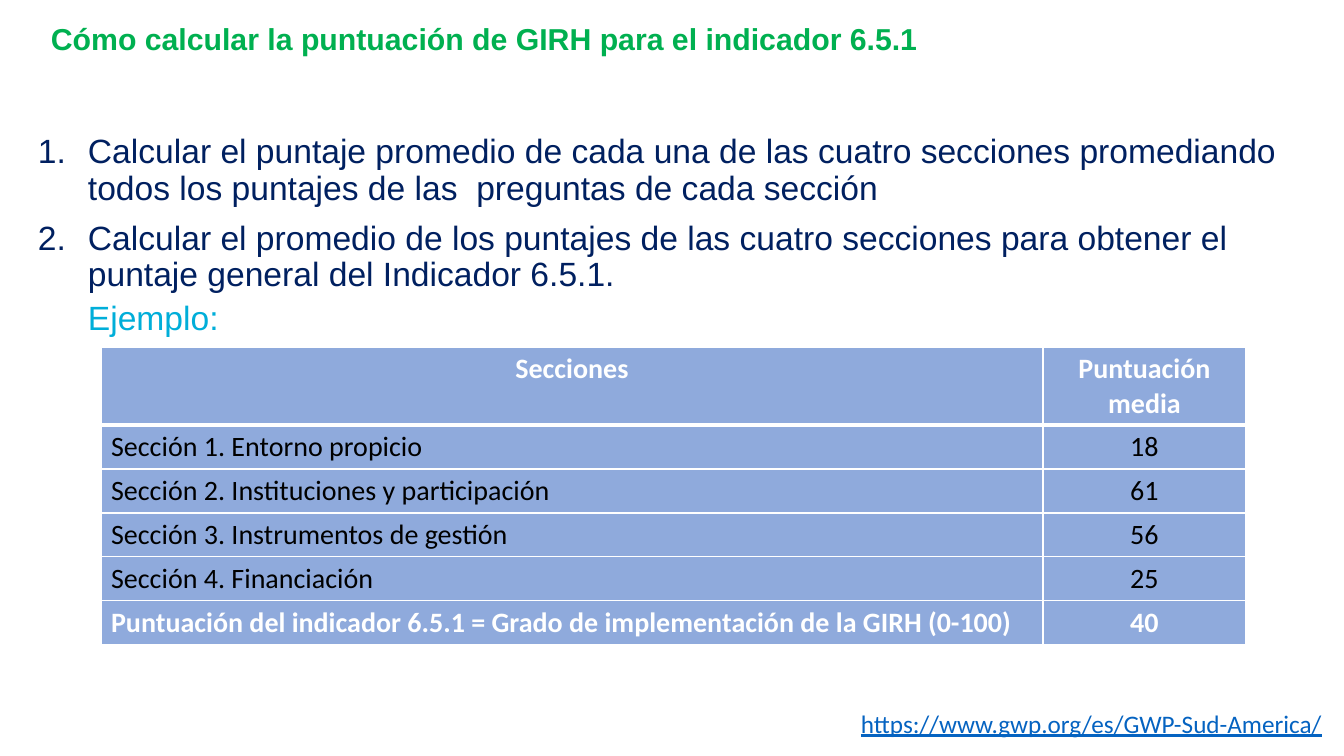
from lxml import etree
from pptx import Presentation
from pptx.dml.color import RGBColor
from pptx.enum.text import MSO_ANCHOR, PP_ALIGN
from pptx.oxml.ns import qn
from pptx.util import Emu, Pt

MIDDLE = MSO_ANCHOR.MIDDLE
LEFT, CENTER = PP_ALIGN.LEFT, PP_ALIGN.CENTER
SCALE = 914400 / 100.8
COLORS = {"green": "00B050", "navy": "002060", "cyan": "00AED9", "link": "0563C1",
          "blue": "8FAADC", "white": "FFFFFF", "black": "000000"}


def px(n):
    """Turn px into EMU."""
    return Emu(round(n * SCALE))


def style(para, size, color, name="Arial", bold=False):
    font = para.font
    font.size, font.name, font.bold = Pt(size), name, bold
    font.color.rgb = RGBColor.from_string(COLORS[color])


prs = Presentation()
prs.slide_width, prs.slide_height = px(1344), px(756)
slide = prs.slides.add_slide(prs.slide_layouts[6])

# Text boxes
boxes = []
for left, top, width, height in [(851, 703, 493, 40), (41, 19, 1003, 44),
                                 (28, 130, 1286, 282)]:
    frame = slide.shapes.add_textbox(px(left), px(top), px(width), px(height)).text_frame
    frame.word_wrap = True
    boxes.append(frame)
link, title, body = boxes

para = link.paragraphs[0]
para.text = "https://www.gwp.org/es/GWP-Sud-America/"
style(para, 18, "link", "Calibri")
para.font.underline = True

title.vertical_anchor = MIDDLE
para = title.paragraphs[0]
para.text = "Cómo calcular la puntuación de GIRH para el indicador 6.5.1"
para.line_spacing = 0.9
style(para, 21.6, "green", bold=True)

# Numbered steps and the example line
STEPS = [
    ("Calcular el puntaje promedio de cada una de las cuatro secciones promediando "
     "todos los puntajes de las  preguntas de cada sección", "navy", 0, True),
    ("Calcular el promedio de los puntajes de las cuatro secciones para obtener el "
     "puntaje general del Indicador 6.5.1.", "navy", 10, True),
    ("Ejemplo:", "cyan", 5, False),
]
for i, (text, color, gap, numbered) in enumerate(STEPS):
    para = body.add_paragraph() if i else body.paragraphs[0]
    para.text = text
    para.line_spacing = 0.9
    para.space_before = Pt(gap)
    props = para._p.get_or_add_pPr()
    indent = px(50)
    props.set("marL", str(indent))
    props.set("indent", str(-indent if numbered else 0))
    if numbered:
        etree.SubElement(props, qn("a:buFont"), typeface="+mj-lt")
        etree.SubElement(props, qn("a:buAutoNum"), type="arabicPeriod")
    else:
        para.level = 1
        etree.SubElement(props, qn("a:buNone"))
    style(para, 24, color)

# Score table
ROWS = [
    ("Secciones", "Puntuación media"),
    ("Sección 1. Entorno propicio", "18"),
    ("Sección 2. Instituciones y participación", "61"),
    ("Sección 3. Instrumentos de gestión", "56"),
    ("Sección 4. Financiación", "25"),
    ("Puntuación del indicador 6.5.1 = Grado de implementación de la GIRH (0-100)", "40"),
]
last = len(ROWS) - 1
table = slide.shapes.add_table(len(ROWS), 2, px(101), px(347), px(1145), px(295)).table
for col, width in zip(table.columns, (942, 203)):
    col.width = px(width)
for r, texts in enumerate(ROWS):
    table.rows[r].height = px(44 if r else 78)
    strong = r in (0, last)
    for c, text in enumerate(texts):
        cell = table.cell(r, c)
        cell.text = text
        para = cell.text_frame.paragraphs[0]
        para.alignment = CENTER if c or r == 0 else LEFT
        style(para, 20, "white" if strong else "black", "Calibri", strong)
        props = cell._tc.get_or_add_tcPr()
        for side in ("lnL", "lnR", "lnT", "lnB"):
            weight = 3 if r == 0 and side == "lnB" else 1
            line = etree.SubElement(props, qn("a:" + side), w=str(Pt(weight)))
            fill = etree.SubElement(line, qn("a:solidFill"))
            etree.SubElement(fill, qn("a:srgbClr"), val=COLORS["white"])
        cell.fill.solid()
        cell.fill.fore_color.rgb = RGBColor.from_string(COLORS["blue"])

prs.save("out.pptx")
